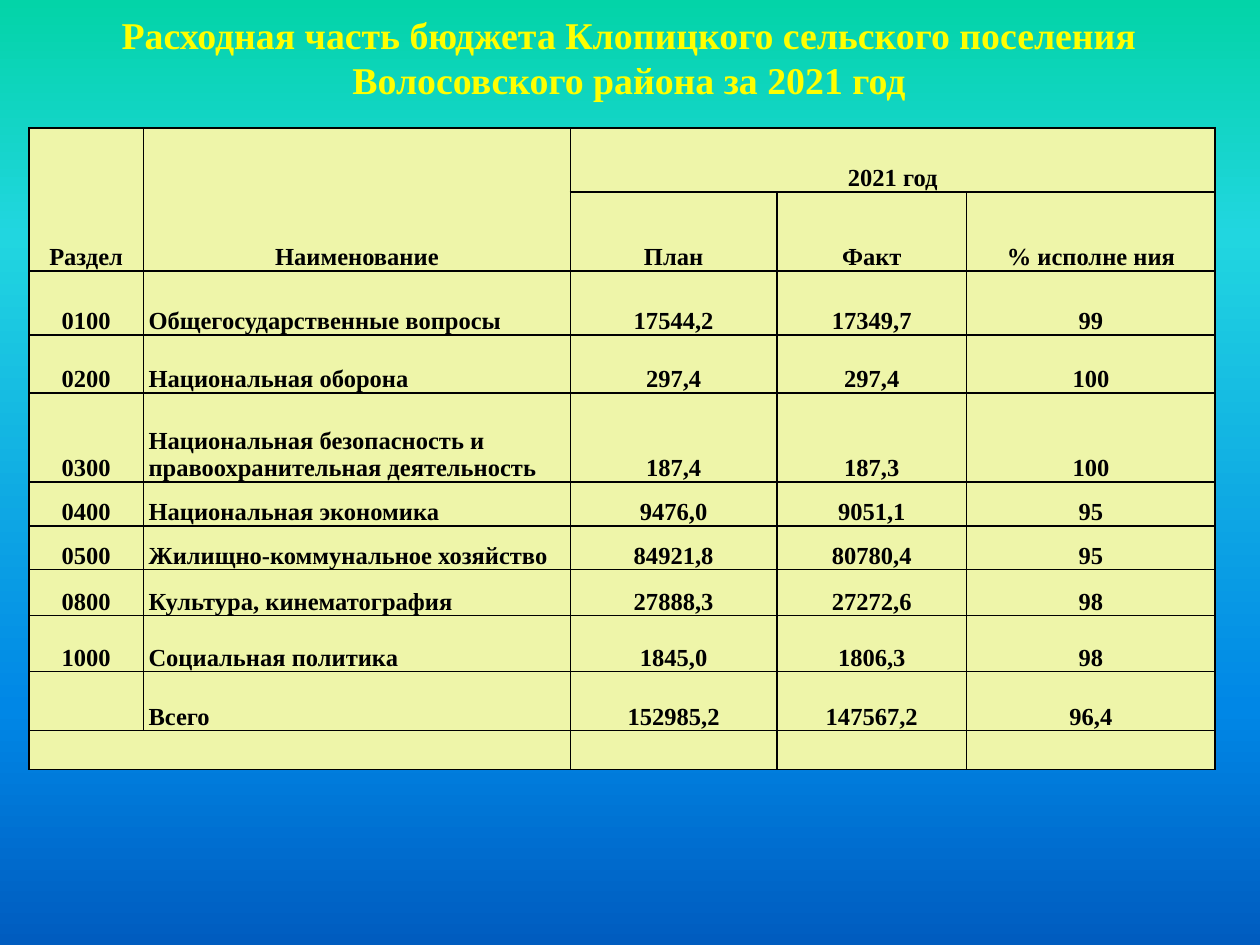
from copy import deepcopy
from dataclasses import dataclass

from lxml.etree import SubElement
from pptx import Presentation
from pptx.dml.color import RGBColor as Color
from pptx.enum.text import MSO_ANCHOR as Anchor, PP_ALIGN as Align
from pptx.oxml.ns import qn
from pptx.util import Pt


@dataclass(frozen=True)
class Theme:
    font: str = "Times New Roman"
    title_size: float = 21.6
    table_size: float = 14
    title_color: str = "FFFF00"
    text_color: str = "000000"
    cell_color: str = "EEF5A9"
    border_color: str = "000000"
    border_width: float = 1
    backdrop: tuple = ((0, "03D4A8"), (0.25, "21D6E0"), (0.75, "0087E6"), (1, "005CBF"))


class SlideBuilder:
    """Draws styled elements on one slide, with all lengths in points."""

    def __init__(self, slide, theme):
        self.slide = slide
        self.theme = theme

    def background(self):
        fill = self.slide.background.fill
        fill.gradient()
        fill.gradient_angle = 270
        stop_list = self.slide.element.find(".//" + qn("a:gsLst"))
        while len(stop_list) < len(self.theme.backdrop):
            stop_list.append(deepcopy(stop_list[0]))
        for stop, (position, color) in zip(fill.gradient_stops, self.theme.backdrop):
            stop.position = position
            stop.color.rgb = Color.from_string(color)

    def style(self, paragraph, size, color, align):
        paragraph.alignment = align
        font = paragraph.font
        font.name, font.size, font.bold = self.theme.font, Pt(size), True
        font.color.rgb = Color.from_string(color)

    def title(self, text, left, top, width, height):
        shape = self.slide.shapes.add_textbox(Pt(left), Pt(top), Pt(width), Pt(height))
        frame = shape.text_frame
        frame.word_wrap = True
        frame.vertical_anchor = Anchor.BOTTOM
        frame.text = text
        self.style(frame.paragraphs[0], self.theme.title_size, self.theme.title_color, Align.CENTER)

    def borders(self, cell):
        properties = cell._tc.get_or_add_tcPr()
        for index, side in enumerate(("lnL", "lnR", "lnT", "lnB")):
            line = SubElement(properties, qn("a:" + side), w=str(Pt(self.theme.border_width)))
            fill = SubElement(line, qn("a:solidFill"))
            SubElement(fill, qn("a:srgbClr"), val=self.theme.border_color)
            properties.insert(index, line)

    def cell(self, cell, text, align, left_margin):
        cell.fill.solid()
        cell.fill.fore_color.rgb = Color.from_string(self.theme.cell_color)
        self.borders(cell)
        cell.vertical_anchor = Anchor.BOTTOM
        cell.margin_left = Pt(left_margin)
        cell.margin_top = cell.margin_right = Pt(0.7)
        cell.margin_bottom = Pt(0)
        cell.text = text
        self.style(cell.text_frame.paragraphs[0], self.theme.table_size, self.theme.text_color, align)

    def table(self, rows, left, top, widths, heights, merges, name_column, header_rows):
        frame = self.slide.shapes.add_table(
            len(rows), len(widths), Pt(left), Pt(top), Pt(sum(widths)), Pt(sum(heights)))
        table = frame.table
        table.first_row = table.horz_banding = False
        for column, width in zip(table.columns, widths):
            column.width = Pt(width)
        for row, height in zip(table.rows, heights):
            row.height = Pt(height)
        for row_index, row in enumerate(rows):
            for column_index, text in enumerate(row):
                is_name = column_index == name_column and row_index >= header_rows
                align, margin = (Align.LEFT, 2.9) if is_name else (Align.CENTER, 0.7)
                self.cell(table.cell(row_index, column_index), text, align, margin)
        for first, last in merges:
            table.cell(*first).merge(table.cell(*last))


BUDGET_ROWS = (
    ("Раздел", "Наименование", "2021 год", "", ""),
    ("", "", "План", "Факт", "% исполне ния"),
    ("0100", "Общегосударственные вопросы", "17544,2", "17349,7", "99"),
    ("0200", "Национальная оборона", "297,4", "297,4", "100"),
    ("0300", "Национальная безопасность и правоохранительная деятельность", "187,4", "187,3", "100"),
    ("0400", "Национальная экономика", "9476,0", "9051,1", "95"),
    ("0500", "Жилищно-коммунальное хозяйство", "84921,8", "80780,4", "95"),
    ("0800", "Культура, кинематография", "27888,3", "27272,6", "98"),
    ("1000", "Социальная политика", "1845,0", "1806,3", "98"),
    ("", "Всего", "152985,2", "147567,2", "96,4"),
    ("", "", "", "", ""),
)
COLUMN_WIDTHS = (65.5, 244, 118, 108.5, 142)
ROW_HEIGHTS = (36.6, 45.1, 36.6, 33.1, 50.8, 25.1, 25.1, 26.2, 32, 33.7, 22.3)
MERGES = (((0, 0), (1, 0)), ((0, 1), (1, 1)), ((0, 2), (0, 4)), ((10, 0), (10, 1)))


def main():
    presentation = Presentation()
    presentation.slide_width, presentation.slide_height = Pt(720), Pt(540)
    slide = presentation.slides.add_slide(presentation.slide_layouts[6])
    builder = SlideBuilder(slide, Theme())
    builder.background()
    builder.title(
        "Расходная часть бюджета Клопицкого сельского поселения Волосовского района за 2021 год",
        16.5, 0, 686, 62)
    builder.table(BUDGET_ROWS, 16.5, 73.2, COLUMN_WIDTHS, ROW_HEIGHTS, MERGES,
                  name_column=1, header_rows=2)
    presentation.save("out.pptx")


if __name__ == "__main__":
    main()
